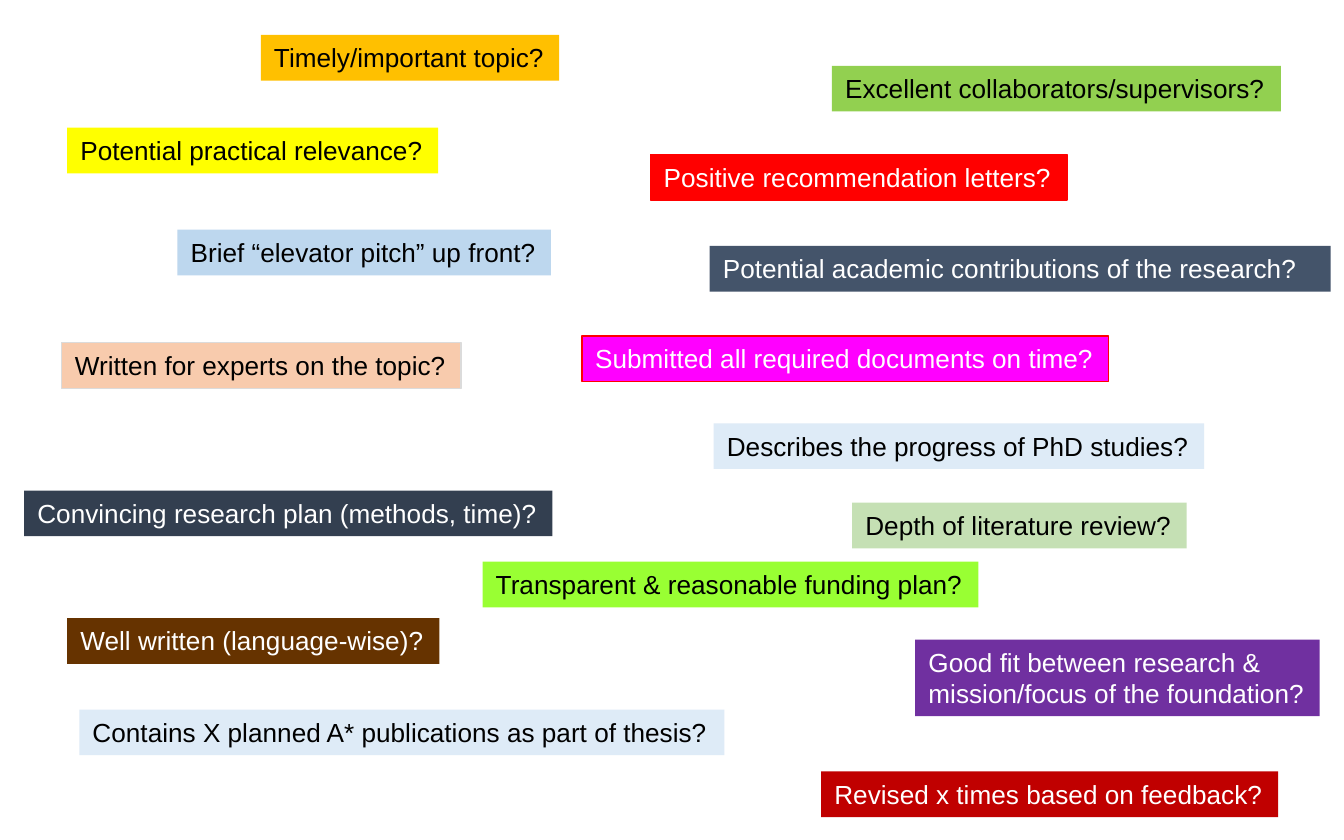
from pptx import Presentation
from pptx.dml.color import RGBColor
from pptx.enum.text import MSO_AUTO_SIZE
from pptx.util import Emu, Pt

PX = 9144  # 100 px to the inch
LABEL_HEIGHT = 34
TWO_LINE_HEIGHT = 57

BLACK = RGBColor(0x00, 0x00, 0x00)
WHITE = RGBColor(0xFF, 0xFF, 0xFF)
YELLOW = RGBColor(0xFF, 0xFF, 0x00)
BROWN = RGBColor(0x66, 0x33, 0x00)
NAVY = RGBColor(0x33, 0x3F, 0x50)
AMBER = RGBColor(0xFF, 0xC0, 0x00)
SAGE = RGBColor(0xC5, 0xE0, 0xB4)
RED = RGBColor(0xFF, 0x00, 0x00)
SLATE = RGBColor(0x44, 0x54, 0x6A)
PURPLE = RGBColor(0x70, 0x30, 0xA0)
LIME = RGBColor(0x99, 0xFF, 0x33)
SKY = RGBColor(0xBD, 0xD7, 0xEE)
GREEN = RGBColor(0x92, 0xD0, 0x50)
PEACH = RGBColor(0xF8, 0xCB, 0xAD)
GREY = RGBColor(0xDB, 0xDB, 0xDB)
DARK_RED = RGBColor(0xC0, 0x00, 0x00)
PALE_BLUE = RGBColor(0xDE, 0xEB, 0xF7)
MAGENTA = RGBColor(0xFF, 0x00, 0xFF)

# Text, left, top, width, fill, text colour, outline
CRITERIA = [
    ("Potential practical relevance?", 50, 95, 276, YELLOW, BLACK, None),
    ("Well written (language-wise)?", 50, 460, 277, BROWN, WHITE, None),
    ("Convincing research plan (methods, time)?", 18, 365, 393, NAVY, WHITE, None),
    ("Timely/important topic?", 194, 26, 222, AMBER, BLACK, None),
    ("Depth of literature review?", 634, 374, 249, SAGE, BLACK, None),
    ("Positive recommendation letters?", 484, 115, 310, RED, WHITE, RED),
    ("Potential academic contributions of the research?", 528, 183, 462, SLATE, WHITE, None),
    ("Good fit between research &\nmission/focus of the foundation?", 681, 476, 301, PURPLE, WHITE, None),
    ("Transparent & reasonable funding plan?", 359, 418, 369, LIME, BLACK, None),
    ("Brief “elevator pitch” up front?", 132, 171, 278, SKY, BLACK, None),
    ("Excellent collaborators/supervisors?", 619, 49, 334, GREEN, BLACK, None),
    ("Written for experts on the topic?", 46, 255, 297, PEACH, BLACK, GREY),
    ("Revised x times based on feedback?", 611, 574, 340, DARK_RED, WHITE, None),
    ("Describes the progress of PhD studies?", 531, 315, 365, PALE_BLUE, BLACK, None),
    ("Contains X planned A* publications as part of thesis?", 59, 528, 480, PALE_BLUE, BLACK, None),
    ("Submitted all required documents on time?", 433, 250, 392, MAGENTA, WHITE, RED),
]


def px(length):
    return Emu(length * PX)


def add_label(slide, text, left, top, width, fill, text_color, outline):
    height = TWO_LINE_HEIGHT if "\n" in text else LABEL_HEIGHT
    label = slide.shapes.add_textbox(px(left), px(top), px(width), px(height))
    label.fill.solid()
    label.fill.fore_color.rgb = fill
    if outline is not None:
        label.line.color.rgb = outline
        label.line.width = Pt(0.75)
    frame = label.text_frame
    frame.text = text
    frame.word_wrap = False
    frame.auto_size = MSO_AUTO_SIZE.SHAPE_TO_FIT_TEXT
    for paragraph in frame.paragraphs:
        paragraph.font.name = "Arial"
        paragraph.font.size = Pt(14)
        paragraph.font.color.rgb = text_color


def main():
    presentation = Presentation()
    presentation.slide_width = px(1000)
    presentation.slide_height = px(625)
    slide = presentation.slides.add_slide(presentation.slide_layouts[6])
    for criterion in CRITERIA:
        add_label(slide, *criterion)
    presentation.save("out.pptx")


if __name__ == "__main__":
    main()
